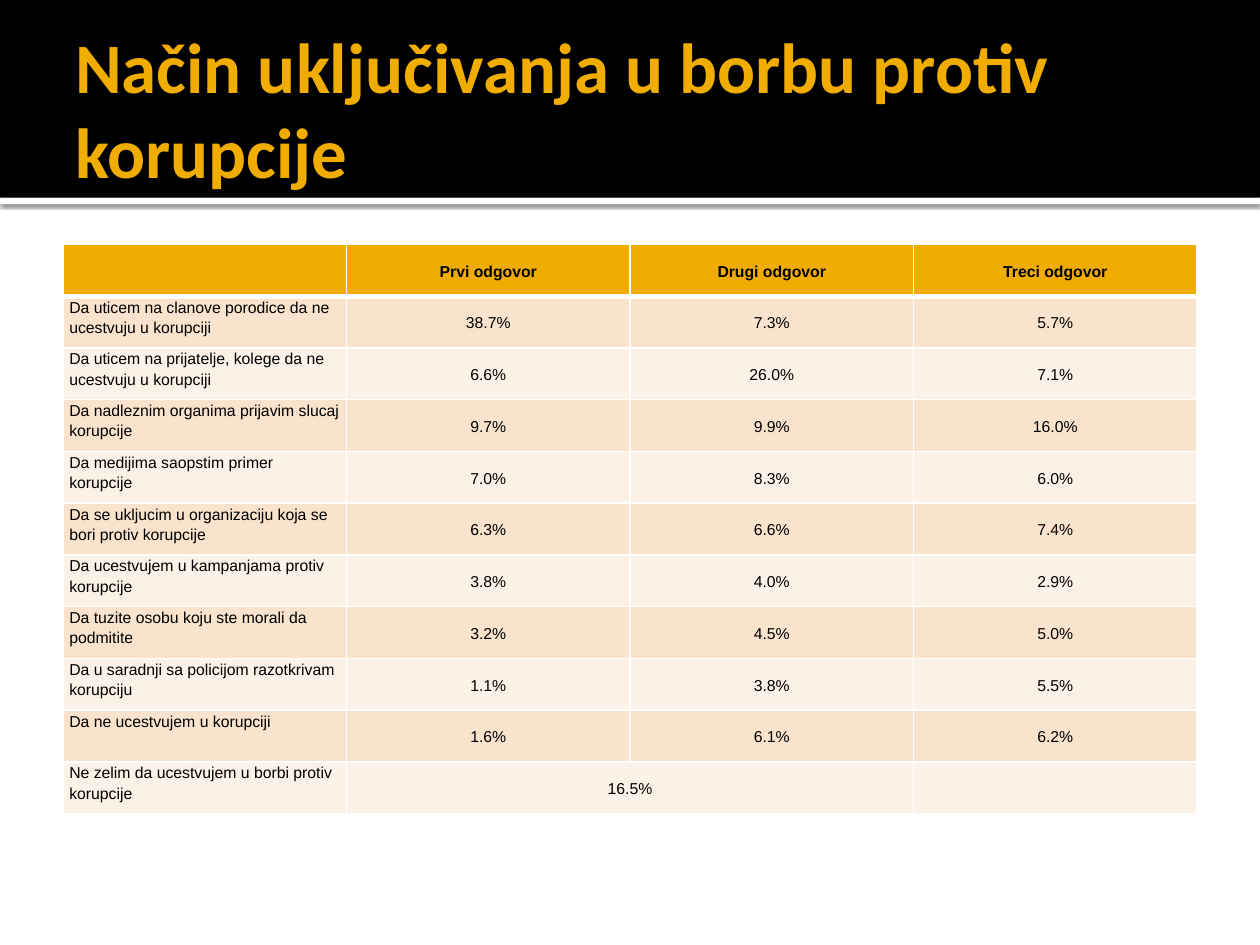
from dataclasses import dataclass

from lxml import etree
from pptx import Presentation
from pptx.dml.color import RGBColor
from pptx.enum.shapes import MSO_SHAPE
from pptx.enum.text import MSO_ANCHOR, PP_ALIGN
from pptx.oxml import parse_xml
from pptx.oxml.ns import nsdecls, qn
from pptx.util import Inches, Pt

RECT = MSO_SHAPE.RECTANGLE
TOP, MIDDLE = MSO_ANCHOR.TOP, MSO_ANCHOR.MIDDLE
LEFT, CENTER = PP_ALIGN.LEFT, PP_ALIGN.CENTER


@dataclass(frozen=True)
class Theme:
    black: str = "000000"
    white: str = "FFFFFF"
    gold: str = "F0AD00"
    band_dark: str = "F9E3CC"
    band_light: str = "FCF1E7"
    title_font: str = "Calibri"
    table_font: str = "Arial"
    title_size: float = 40.5
    table_size: float = 9


THEME = Theme()


def write(tf, text, size=THEME.table_size, font=THEME.table_font,
          color=THEME.black, bold=False, align=LEFT, spacing=None):
    p = tf.paragraphs[0]
    p.alignment = align
    p.line_spacing = spacing
    r = p.add_run()
    r.text = text
    r.font.size = Pt(size)
    r.font.name = font
    r.font.bold = bold
    r.font.color.rgb = RGBColor.from_string(color)


def style_cell(cell, fill, bottom_width):
    """Set the margins, white borders and fill of a cell."""
    cell.margin_left = cell.margin_right = Inches(0.05)
    cell.margin_top = cell.margin_bottom = 0
    tc_pr = cell._tc.get_or_add_tcPr()
    for side, width in (("L", 1), ("R", 1), ("T", 1), ("B", bottom_width)):
        ln = etree.SubElement(tc_pr, qn(f"a:ln{side}"), w=str(Pt(width)))
        solid = etree.SubElement(ln, qn("a:solidFill"))
        etree.SubElement(solid, qn("a:srgbClr"), val=THEME.white)
    cell.fill.solid()
    cell.fill.fore_color.rgb = RGBColor.from_string(fill)


HEADER = ("", "Prvi odgovor", "Drugi odgovor", "Treci odgovor")
ANSWERS = [
    ("Da uticem na clanove porodice da ne ucestvuju u korupciji", "38.7%", "7.3%", "5.7%"),
    ("Da uticem na prijatelje, kolege da ne ucestvuju u korupciji", "6.6%", "26.0%", "7.1%"),
    ("Da nadleznim organima prijavim slucaj korupcije", "9.7%", "9.9%", "16.0%"),
    ("Da medijima saopstim primer korupcije", "7.0%", "8.3%", "6.0%"),
    ("Da se ukljucim u organizaciju koja se bori protiv korupcije", "6.3%", "6.6%", "7.4%"),
    ("Da ucestvujem u kampanjama protiv korupcije", "3.8%", "4.0%", "2.9%"),
    ("Da tuzite osobu koju ste morali da podmitite", "3.2%", "4.5%", "5.0%"),
    ("Da u saradnji sa policijom razotkrivam korupciju", "1.1%", "3.8%", "5.5%"),
    ("Da ne ucestvujem u korupciji", "1.6%", "6.1%", "6.2%"),
    ("Ne zelim da ucestvujem u borbi protiv korupcije", "16.5%", "", ""),
]

prs = Presentation()
prs.slide_width, prs.slide_height = Inches(10), Inches(7.5)
s = prs.slides.add_slide(prs.slide_layouts[6])

# Title band with a shadowed white strip below it
strip = s.shapes.add_shape(RECT, 0, Inches(1.57), Inches(10), Inches(0.05))
band = s.shapes.add_shape(RECT, 0, 0, Inches(10), Inches(1.57))
for sp, color in ((strip, THEME.white), (band, THEME.black)):
    sp.shadow.inherit = False
    sp.fill.solid()
    sp.fill.fore_color.rgb = RGBColor.from_string(color)
    sp.line.fill.background()
strip._element.spPr.find(qn("a:effectLst")).append(parse_xml(
    f'<a:outerShdw {nsdecls("a")} blurRad="{Pt(2.5)}" dist="{Pt(0.8)}" '
    f'dir="5400000" algn="tl" rotWithShape="0"><a:srgbClr val="{THEME.black}">'
    '<a:alpha val="60000"/></a:srgbClr></a:outerShdw>'))

title = s.shapes.add_textbox(Inches(0.5), Inches(0.17), Inches(9), Inches(1.37))
tf = title.text_frame
tf.word_wrap = True
tf.vertical_anchor = MIDDLE
tf.margin_left = Inches(0.1)
tf.margin_right = tf.margin_top = tf.margin_bottom = Inches(0.05)
write(tf, "Način uključivanja u borbu protiv korupcije", size=THEME.title_size,
      font=THEME.title_font, color=THEME.gold, bold=True)

# Answer table
rows = [HEADER] + ANSWERS
table = s.shapes.add_table(len(rows), len(HEADER), Inches(0.5), Inches(1.94),
                           Inches(9), Inches(4.52)).table
table.first_row = table.horz_banding = False
for i, values in enumerate(rows):
    is_header = i == 0
    if is_header:
        fill = THEME.gold
    else:
        fill = THEME.band_dark if i % 2 else THEME.band_light
    for j, text in enumerate(values):
        cell = table.cell(i, j)
        style_cell(cell, fill, bottom_width=3 if is_header else 1)
        cell.vertical_anchor = MIDDLE if j else TOP
        if text:
            write(cell.text_frame, text, bold=is_header,
                  align=CENTER if j else LEFT, spacing=1.15)
last = len(rows) - 1
table.cell(last, 1).merge(table.cell(last, 2))

prs.save("out.pptx")
